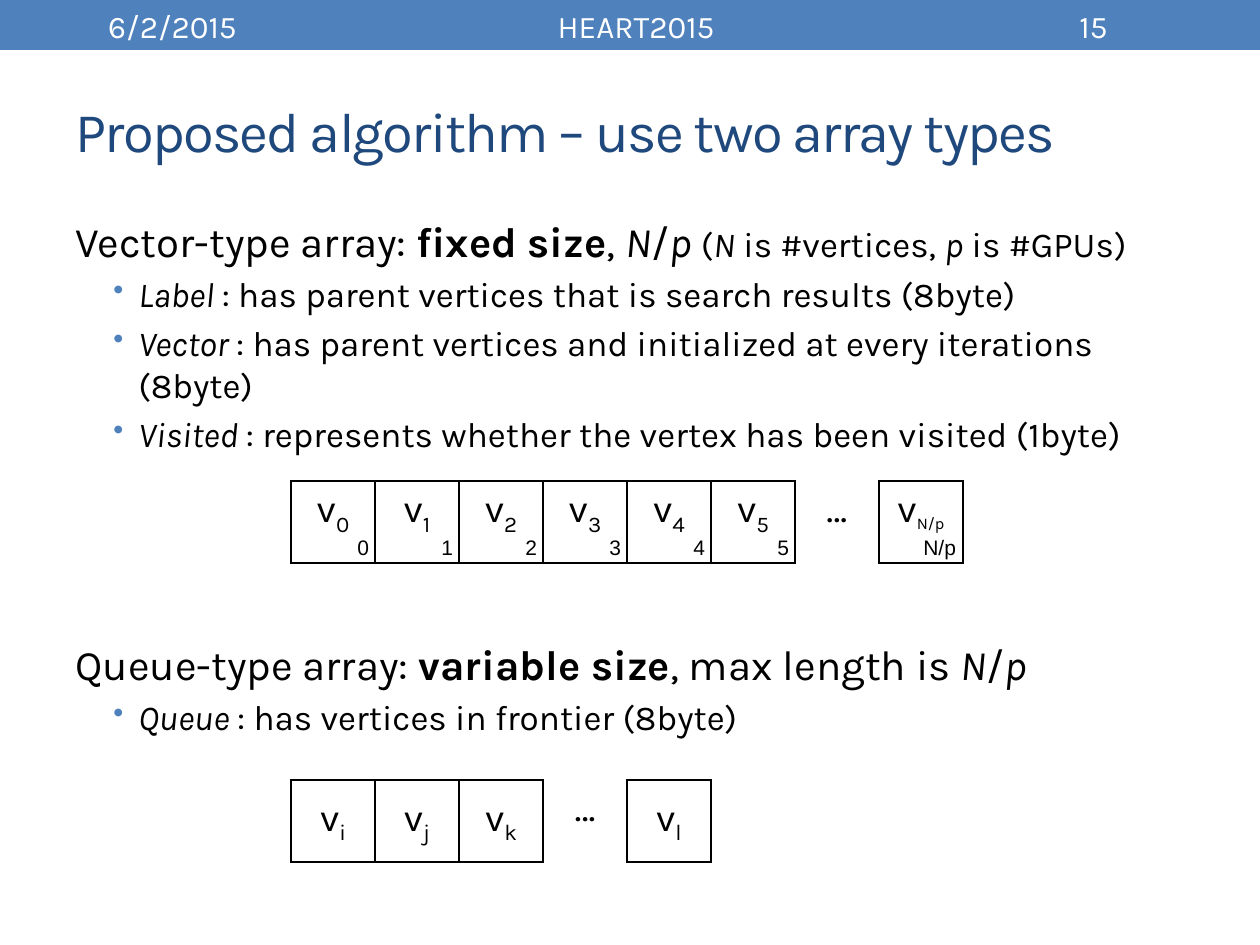
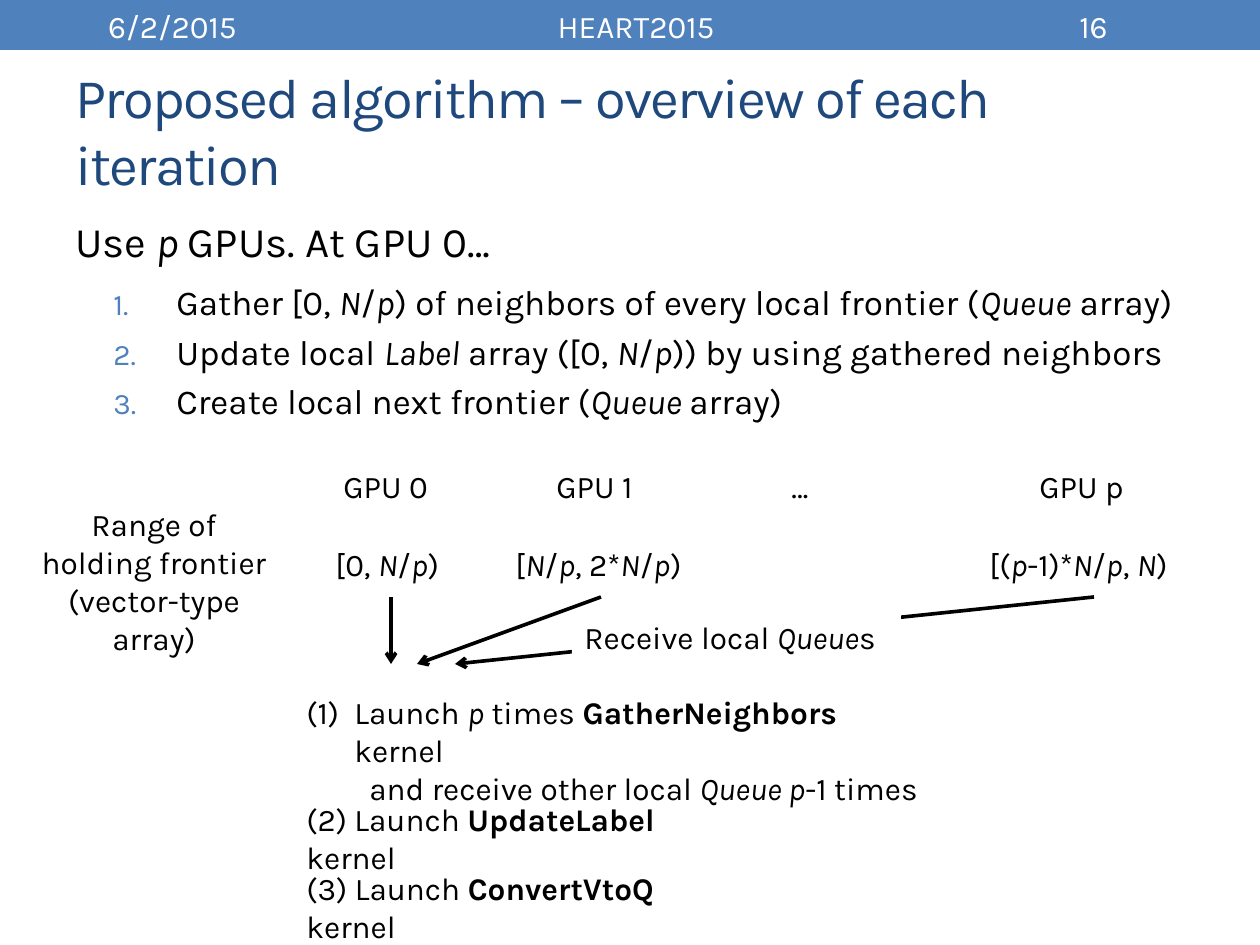
"""Build two slides on a graph search that is spread over several GPUs."""
import lxml.etree
import pptx
import pptx.dml.color
import pptx.enum.shapes
import pptx.enum.text
import pptx.oxml.ns
import pptx.util

SCALE = 914400 / 126
FONT = "Karla"
HUES = {"band": "4F81BD", "title": "1F497D", "ink": "000000", "paper": "FFFFFF"}
MID = pptx.enum.text.MSO_ANCHOR.MIDDLE
TOP = pptx.enum.text.MSO_ANCHOR.TOP
CENTER = pptx.enum.text.PP_ALIGN.CENTER
LEFT = pptx.enum.text.PP_ALIGN.LEFT
CELL = 84


def px(count):
    """Turn px into EMU."""
    return pptx.util.Emu(round(count * SCALE))


def hue(name):
    """Look up a colour by name."""
    return pptx.dml.color.RGBColor.from_string(HUES[name])


def node(parent, tag, **attrs):
    """Append a drawing element and return it."""
    item = lxml.etree.SubElement(parent, pptx.oxml.ns.qn("a:" + tag))
    for key, value in attrs.items():
        item.set(key, str(value))
    return item


def write(para, text, size, color="ink", font=FONT, align=LEFT):
    """Fill a paragraph; |bold|, _italic_ and ~subscript~ mark runs."""
    para.alignment = align
    for i, thick in enumerate(text.split("|")):
        for j, slant in enumerate(thick.split("_")):
            for k, bit in enumerate(slant.split("~")):
                if not bit:
                    continue
                run = para.add_run()
                run.text = bit
                run.font.name = font
                run.font.size = pptx.util.Pt(size)
                run.font.bold = i % 2 == 1
                run.font.italic = j % 2 == 1
                run.font.color.rgb = hue(color)
                if k % 2:
                    run.font.size = pptx.util.Pt(size if len(bit) == 1 else 16)
                    run._r.get_or_add_rPr().set("baseline", "-25000")


def label(slide, box, lines=(), size=18, anchor=TOP, **style):
    """Add a wrapped text box and return its frame."""
    frame = slide.shapes.add_textbox(*map(px, box)).text_frame
    frame.word_wrap = True
    frame.vertical_anchor = anchor
    for i, line in enumerate(lines):
        para = frame.add_paragraph() if i else frame.paragraphs[0]
        write(para, line, size, **style)
    return frame


def block(slide, box, fill):
    """Add a plain filled rectangle."""
    shape = slide.shapes.add_shape(
        pptx.enum.shapes.MSO_SHAPE.RECTANGLE, *map(px, box))
    shape.shadow.inherit = False
    shape.fill.solid()
    shape.fill.fore_color.rgb = hue(fill)
    shape.line.fill.background()
    return shape


def indent(para, left, hang=0):
    """Set the left margin and the hanging indent of a paragraph."""
    props = para._p.get_or_add_pPr()
    props.set("marL", str(px(left)))
    props.set("indent", str(px(-hang)))
    return props


def base(deck, title, number):
    """Start a slide with its band, header fields and title."""
    slide = deck.slides.add_slide(deck.slide_layouts[6])
    block(slide, (0, 0, 1260, 50), "band")
    fields = (("6/2/2015", 63, 219), ("HEART2015", 294, 684), (str(number), 990, 207))
    for text, left, width in fields:
        label(slide, (left, 3, width, 45), [text], anchor=MID,
              color="paper", align=CENTER)
    frame = label(slide, (63, 62, 1134, 136), [title], 32, MID, color="title")
    for run in frame.paragraphs[0].runs:
        run._r.get_or_add_rPr().set("spc", "-100")
    return slide


def body(slide, box, items, count=False):
    """Add heads and their bullets or numbers; items are (level, text, gap)."""
    frame = label(slide, box)
    for i, (level, text, gap) in enumerate(items):
        para = frame.add_paragraph() if i else frame.paragraphs[0]
        write(para, text, 20 if level else 24)
        para.space_before = pptx.util.Pt(gap)
        if not level:
            continue
        para.level = level
        props = indent(para, *((101, 63) if count else (63, 25)))
        if count and i == 1:
            para.line_spacing = 1.2
        node(node(props, "buClr"), "srgbClr", val=HUES["band"])
        node(props, "buSzPct", val=85000)
        if count:
            node(props, "buAutoNum", type="arabicPeriod")
        else:
            node(props, "buChar", char="•")
    return frame


def edge(cell, sides):
    """Draw the named borders of a cell and hide the others."""
    props = cell._tc.get_or_add_tcPr()
    for i, side in enumerate("LRTB"):
        line = lxml.etree.Element(pptx.oxml.ns.qn("a:ln" + side))
        line.set("w", str(pptx.util.Pt(1.5)))
        if side in sides:
            node(node(line, "solidFill"), "srgbClr", val=HUES["ink"])
        else:
            node(line, "noFill")
        props.insert(i, line)


def strip(slide, left, top, texts, anchor, tail=CELL):
    """Add a one-row table of vertices; the last column is tail wide."""
    size = len(texts)
    wide = CELL * (size - 1) + tail
    shape = slide.shapes.add_table(1, size, px(left), px(top), px(wide), px(82))
    table = shape.table
    table.first_row = table.horz_banding = False
    table.rows[0].height = px(82)
    for i, text in enumerate(texts):
        table.columns[i].width = px(tail if i == size - 1 else CELL)
        cell = table.cell(0, i)
        cell.fill.solid()
        cell.fill.fore_color.rgb = hue("paper")
        cell.vertical_anchor = TOP if text == "…" else anchor
        write(cell.text_frame.paragraphs[0], text, 22, align=CENTER)
        edge(cell, {"…": "LR", "": "L"}.get(text, "LRTB"))


def marks(slide, left, top, names):
    """Put an index at the lower right of each named cell."""
    for i, name in enumerate(names):
        if name:
            wide = 38 if len(name) == 1 else 60
            right = left + CELL * (i + 1) + 8
            label(slide, (right - wide, top + 47, wide, 38), [name], 12, font="Arial")


def arrow(slide, start, end):
    """Draw a black arrow."""
    line = slide.shapes.add_connector(
        pptx.enum.shapes.MSO_CONNECTOR.STRAIGHT, *map(px, start + end))
    line.line.color.rgb = hue("ink")
    line.line.width = pptx.util.Pt(2.08)
    node(line.line._get_or_add_ln(), "tailEnd", type="arrow")
    node(line._element.spPr, "effectLst")


def peers(slide, left, top):
    """Show the GPUs, their ranges and the queues they send."""
    names = (("GPU 0", 318, 113), ("GPU 1", 531, 113), ("…", 766, 49),
             ("GPU p", 1014, 115))
    spans = (("[0, _N_/_p_)", 310, 132), ("[_N_/_p_, 2*_N_/_p_)", 490, 200),
             ("[(_p_-1)*_N_/_p_, _N_)", 964, 221))
    for row, drop in ((names, 0), (spans, 78)):
        for text, shift, wide in row:
            label(slide, (left + shift, top + drop, wide, 50), [text])
    label(slide, (left, top + 38, 282, 127),
          ["Range of", "holding frontier", "(vector-type array)"], align=CENTER)
    for start, end in ((378, 378), (588, 404), (1081, 442)):
        arrow(slide, (left + start, top + 136), (left + end, top + 203))
    note = block(slide, (left + 559, top + 151, 329, 50), "paper").text_frame
    note.word_wrap = True
    write(note.paragraphs[0], "Receive local _Queue_s", 18)


def steps(slide, left, top):
    """List the kernels in launch order."""
    frame = label(slide, (left, top, 645, 89),
                  ["Launch _p_ times |GatherNeighbors |kernel",
                   "and receive other local _Queue p_-1 times"])
    first, second = frame.paragraphs
    node(indent(first, 48, 48), "buAutoNum", type="arabicParenBoth")
    indent(second, 63)
    for i, name in enumerate(("UpdateLabel", "ConvertVtoQ")):
        label(slide, (left, top + 107 + 69 * i, 462, 50),
              [f"({i + 2}) Launch |{name}| kernel"])


def arrays(deck):
    """Build the slide on the two array types."""
    slide = base(deck, "Proposed algorithm – use two array types", 15)
    body(slide, (63, 209, 1134, 672), [
        (0, "Vector-type array: |fixed size|, _N_/_p _", 4.8),
        (1, "_Label _: has parent vertices that is search results (8byte)", 4),
        (1, "_Vector _: has parent vertices and initialized at every "
            "iterations (8byte)", 4),
        (1, "_Visited _: represents whether the vertex has been visited (1byte)", 4),
        (0, "Queue-type array: |variable size|, max length is _N_/_p_", 105),
        (1, "_Queue _: has vertices in frontier (8byte)", 4),
    ])
    head = slide.shapes[-1].text_frame.paragraphs[0]
    write(head, "(_N_ is #vertices, _p_ is #GPUs)", 20)
    names = [str(i) for i in range(6)]
    cells = [f"v~{name}~" for name in names]
    strip(slide, 291, 481, cells + ["…", "v~N/p~"], TOP)
    marks(slide, 291, 481, names + ["", "N/p"])
    strip(slide, 291, 780, ["v~i~", "v~j~", "v~k~", "…", "v~l~", ""], MID, 3 * CELL)


def rounds(deck):
    """Build the slide on one iteration."""
    slide = base(deck, "Proposed algorithm – overview of each iteration", 16)
    body(slide, (63, 209, 1134, 232), [
        (0, "Use _p _GPUs. At GPU 0…", 4.8),
        (1, "Gather [0, _N_/_p_) of neighbors of every local frontier "
            "(_Queue_ array)", 4),
        (1, "Update local _Label_ array ([0, _N_/_p_)) by using gathered neighbors", 4),
        (1, "Create local next frontier (_Queue _array)", 4),
    ], count=True)
    peers(slide, 13, 461)
    steps(slide, 294, 687)


def main():
    """Build and save the deck."""
    deck = pptx.Presentation()
    deck.slide_width = px(1260)
    deck.slide_height = px(945)
    arrays(deck)
    rounds(deck)
    deck.save("out.pptx")


if __name__ == "__main__":
    main()
